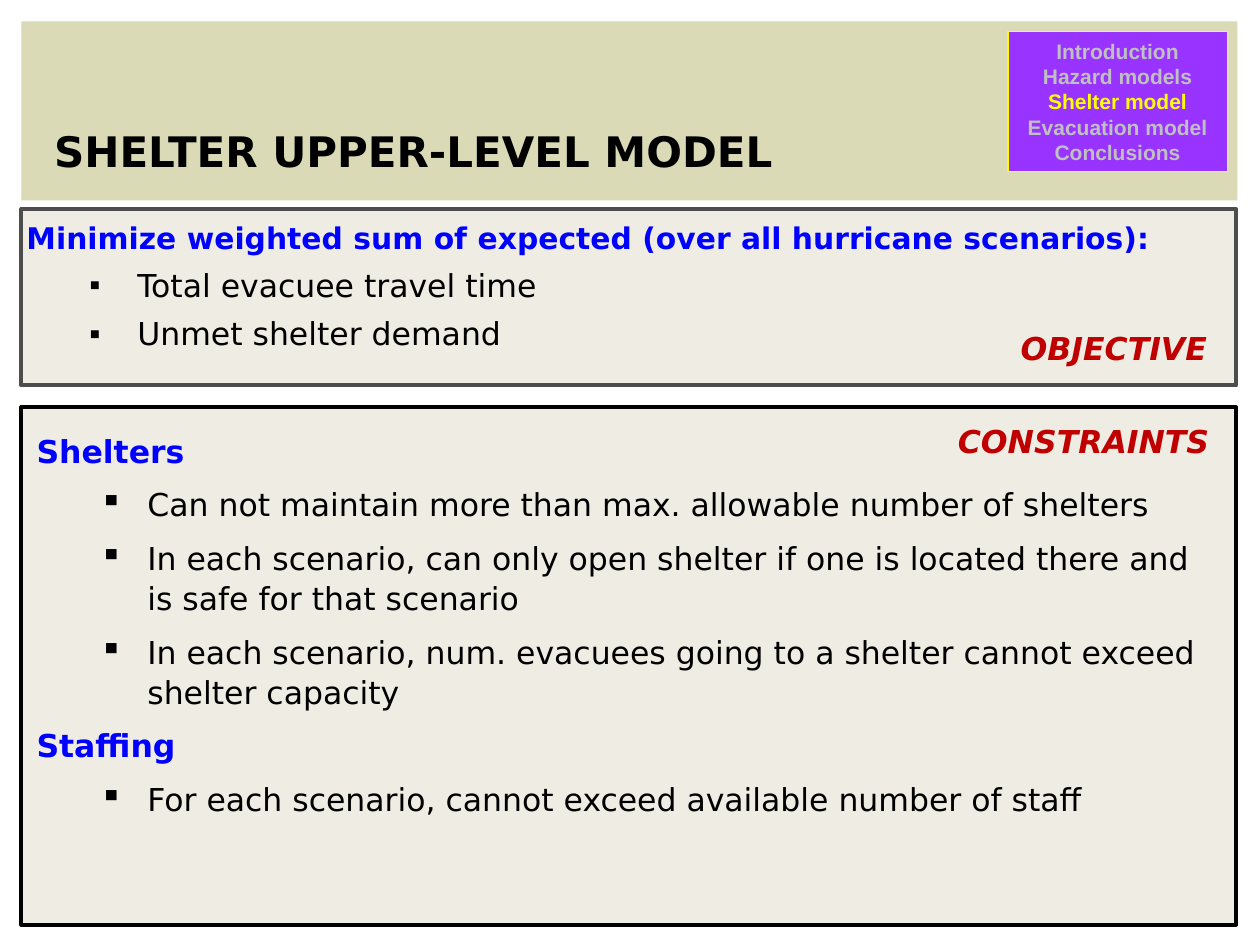
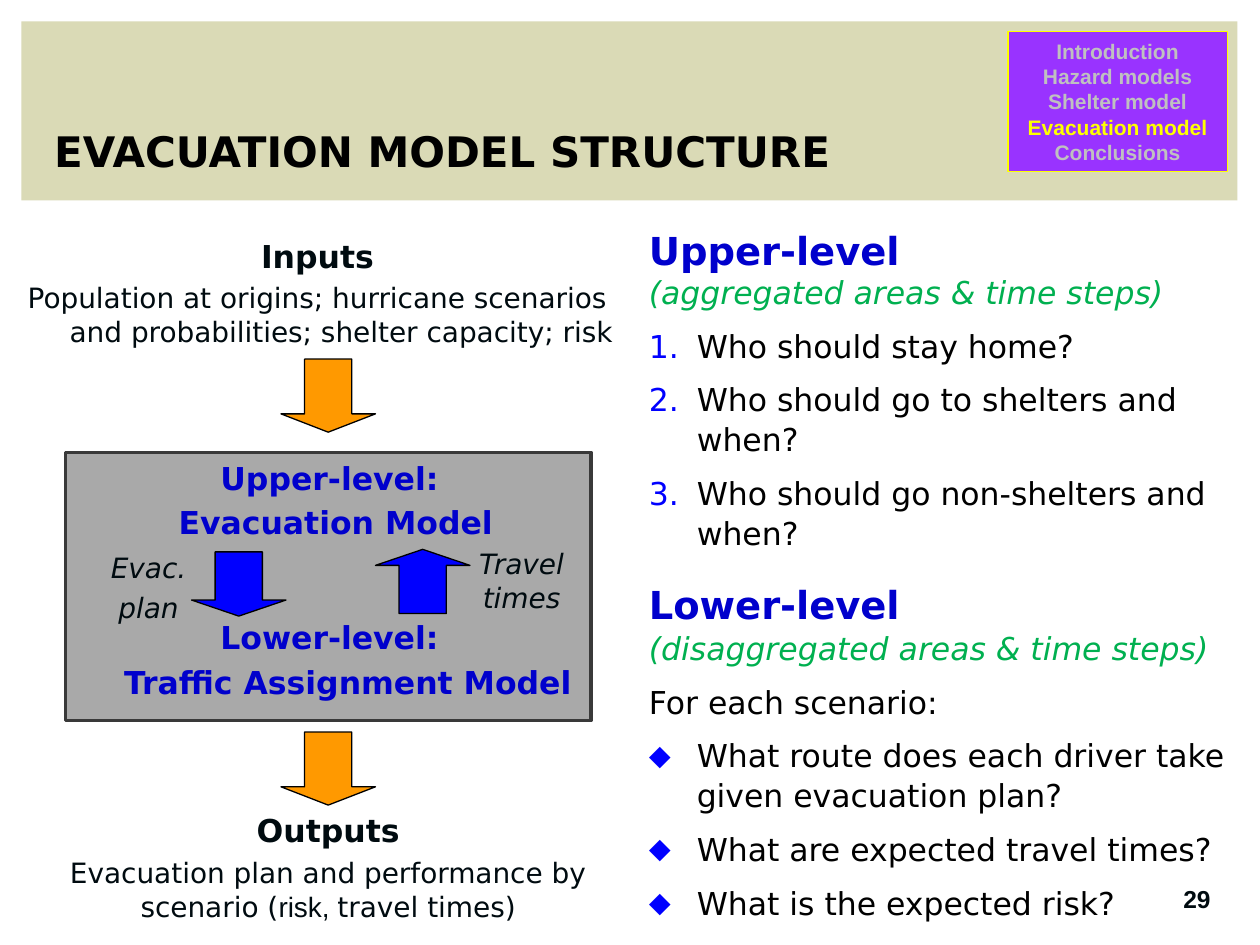
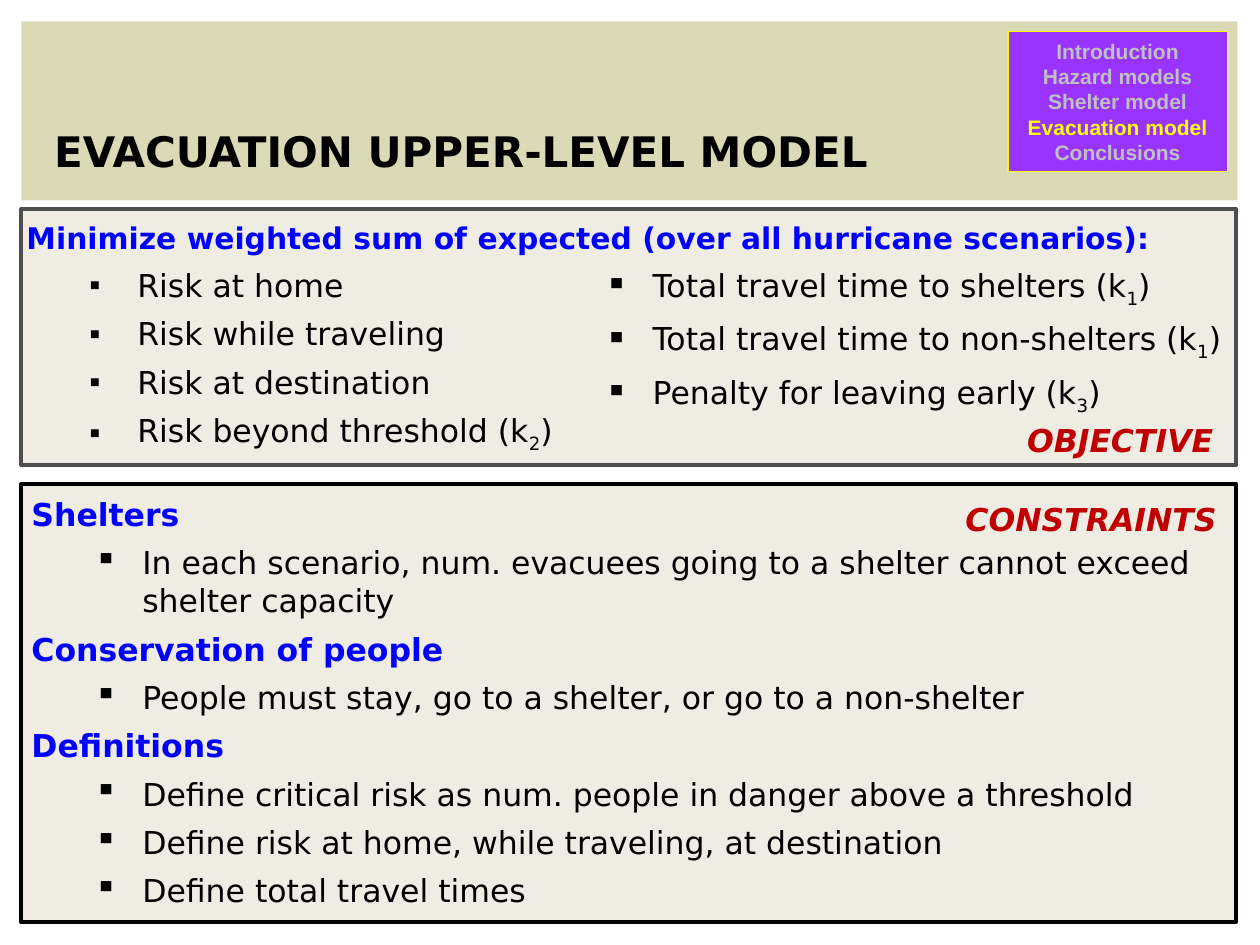
from dataclasses import dataclass, replace

from lxml.etree import SubElement
from pptx import Presentation
from pptx.dml.color import RGBColor
from pptx.enum.shapes import MSO_SHAPE as Preset
from pptx.enum.text import MSO_ANCHOR as Anchor, MSO_AUTO_SIZE as AutoSize, PP_ALIGN as Align
from pptx.oxml.ns import qn
from pptx.util import Inches, Pt

SANS, ARIAL = "DejaVu Sans", "Arial"
BLACK, INK, BLUE, NAVY = "000000", "000B10", "0000FF", "0000CC"
RED, GREEN, ORANGE, YELLOW = "C00000", "00B050", "FF9900", "FFFF00"
SILVER, PURPLE, BAND, CREAM, GRAY = "C0C0C0", "9933FF", "DADAB6", "EFEDE3", "4D4D4D"
SECTIONS = ["Introduction", "Hazard models", "Shelter model", "Evacuation model", "Conclusions"]


@dataclass(frozen=True)
class Style:
    """Look of one paragraph, with lengths in inches and sizes in points."""
    size: float = 18
    color: str = BLACK
    bold: bool = False
    italic: bool = False
    font: str = SANS
    align: Align = Align.LEFT
    before: float = 0
    spacing: float = 1.0
    left: float = 0
    hang: float = 0
    bullet: str = ""
    bullet_color: str = ""


TITLE = Style(24, bold=True, spacing=1.04)
GOAL = Style(17, BLUE, bold=True, spacing=1.05)
TOPIC = Style(color=BLUE, bold=True, before=6)
POINT = Style(before=6, left=0.88, hang=0.38, bullet="▪")
OPEN_TOPIC = replace(TOPIC, before=8.1, spacing=1.05)
OPEN_POINT = replace(POINT, before=8.1, spacing=1.05)
TAG = Style(color=RED, bold=True, italic=True, align=Align.CENTER)
LEVEL = Style(22, NAVY, bold=True, spacing=1.05)
SCOPE = Style(color=GREEN, italic=True, spacing=1.05)
PLAIN = Style(before=8.1, spacing=1.05)
QUESTION = replace(PLAIN, left=0.38, hang=0.38, bullet="⬥", bullet_color=BLUE)
NUMBERED = replace(QUESTION, bullet="1.")
CAPTION = Style(color=INK, bold=True, align=Align.CENTER)
DETAIL = Style(16, INK, align=Align.CENTER, before=3.6)
MODEL = Style(color=NAVY, bold=True, align=Align.CENTER, before=3.6)
FLOW = replace(DETAIL, italic=True)
SECTION = Style(12, SILVER, bold=True, font=ARIAL, align=Align.CENTER)
NUMBER = Style(14, INK, bold=True, font=ARIAL, align=Align.CENTER)


def rgb(code):
    """Turn a hex string into a colour."""
    return RGBColor.from_string(code)


def add_bullet(paragraph, style):
    """Set the indents and the bullet of a paragraph."""
    props = paragraph._p.get_or_add_pPr()
    props.set("marL", str(Inches(style.left)))
    props.set("indent", str(-Inches(style.hang)))
    if style.bullet_color:
        color = SubElement(props, qn("a:buClr"))
        SubElement(color, qn("a:srgbClr"), val=style.bullet_color)
    if style.bullet == "1.":
        SubElement(props, qn("a:buAutoNum"), type="arabicPeriod")
    elif style.bullet:
        SubElement(props, qn("a:buChar"), char=style.bullet)
    else:
        SubElement(props, qn("a:buNone"))


def write(frame, lines):
    """Write (style, text) lines; each | in a text starts a new run."""
    for index, (style, text) in enumerate(lines):
        paragraph = frame.paragraphs[0] if index == 0 else frame.add_paragraph()
        for part in text.split("|"):
            paragraph.add_run().text = part
        add_bullet(paragraph, style)
        paragraph.alignment = style.align
        paragraph.line_spacing = style.spacing
        paragraph.space_before = Pt(style.before if index else 0)
        font = paragraph.font
        font.name, font.size = style.font, Pt(style.size)
        font.bold, font.italic = style.bold, style.italic
        font.color.rgb = rgb(style.color)


def lower_marks(frame):
    """Lower every second run to a subscript."""
    for paragraph in frame.paragraphs:
        for span in paragraph.runs[1::2]:
            span.font._element.set("baseline", "-25000")


def set_insets(frame, size):
    """Give a text frame equal insets."""
    frame.margin_left = frame.margin_right = Inches(size)
    frame.margin_top = frame.margin_bottom = Inches(size)


def fill_placeholder(holder, at, lines, anchor=Anchor.TOP):
    """Move a placeholder and write its lines."""
    holder.left, holder.top, holder.width, holder.height = map(Inches, at)
    frame = holder.text_frame
    set_insets(frame, 0)
    frame.auto_size, frame.vertical_anchor = AutoSize.NONE, anchor
    write(frame, lines)
    return frame


def add_text(page, at, lines, inset=None, wrap=True):
    """Add a text box and return its frame."""
    frame = page.shapes.add_textbox(*map(Inches, at)).text_frame
    frame.word_wrap = wrap
    if inset is not None:
        set_insets(frame, inset)
    write(frame, lines)
    return frame


def add_block(page, at, fill, line=None, width=0.75, preset=Preset.RECTANGLE):
    """Add a filled preset shape."""
    block = page.shapes.add_shape(preset, *map(Inches, at))
    block.shadow.inherit = False
    block.fill.solid()
    block.fill.fore_color.rgb = rgb(fill)
    if line:
        block.line.color.rgb = rgb(line)
        block.line.width = Pt(width)
    else:
        block.line.fill.background()
    return block


def add_panel(page, top, height, line):
    """Add a cream panel behind the text of the page."""
    panel = add_block(page, (0.17, top, 9.64, height), CREAM, line, 2.25)
    page.shapes[0]._element.addprevious(panel._element)


def add_tag(page, left, top, width, text):
    """Add a red label to a panel."""
    frame = add_text(page, (left, top, width, 0.4), [(TAG, text)], wrap=False)
    frame.auto_size = AutoSize.SHAPE_TO_FIT_TEXT


def add_arrow(page, left, top, height, fill, preset=Preset.DOWN_ARROW):
    """Add a block arrow."""
    arrow = add_block(page, (left, top, 0.75, height), fill, BLACK, preset=preset)
    arrow.adjustments[0], arrow.adjustments[1] = 0.5, 0.25


def add_band(deck, page):
    """Place the title band on the slide master."""
    band = add_block(page, (0.17, 0.17, 9.65, 1.42), BAND)
    band._element.nvSpPr.cNvPr.set("id", "99")
    deck.slide_master.placeholders[0]._element.addprevious(band._element)


def add_page(deck, title, current):
    """Add a page with its title and the section list."""
    page = deck.slides.add_slide(deck.slide_layouts[1])
    fill_placeholder(page.shapes.title, (0.43, 0.29, 9.07, 1.11), [(TITLE, title)], Anchor.BOTTOM)
    sections = add_block(page, (8, 0.25, 1.74, 1.11), PURPLE, YELLOW)
    write(sections.text_frame, [
        (replace(SECTION, color=YELLOW) if name == current else SECTION, name) for name in SECTIONS])
    return page


def add_objective(page, points):
    """Fill the body with the goal and its terms."""
    goal = "Minimize weighted sum of expected (over all hurricane scenarios):"
    return fill_placeholder(page.placeholders[1], (0.21, 1.73, 9.79, 1.69),
                            [(GOAL, goal)] + [(POINT, text) for text in points])


def build_shelter(page):
    """Fill the shelter model page."""
    add_panel(page, 3.23, 4.11, BLACK)
    add_panel(page, 1.66, 1.4, GRAY)
    add_tag(page, 7.95, 2.56, 1.78, "OBJECTIVE")
    add_tag(page, 7.47, 3.3, 2.26, "CONSTRAINTS")
    add_objective(page, ["Total evacuee travel time", "Unmet shelter demand"])
    add_text(page, (0.29, 3.41, 9.34, 3.69), [
        (OPEN_TOPIC, "Shelters"),
        (OPEN_POINT, "Can not maintain more than max. allowable number of shelters"),
        (OPEN_POINT, "In each scenario, can only open shelter if one is located there and "
                     "is safe for that scenario"),
        (OPEN_POINT, "In each scenario, num. evacuees going to a shelter cannot exceed "
                     "shelter capacity"),
        (OPEN_TOPIC, "Staffing"),
        (OPEN_POINT, "For each scenario, cannot exceed available number of staff"),
    ], inset=0)


def build_structure(page):
    """Fill the evacuation model structure page."""
    number = add_text(page, (9.01, 6.88, 0.98, 0.5), [(NUMBER, "29")], inset=0.04, wrap=False)
    number.vertical_anchor = Anchor.MIDDLE
    add_text(page, (0, 1.83, 5.04, 1.02), [
        (CAPTION, "Inputs"),
        (replace(DETAIL, left=0.38, hang=0.38),
         "Population at origins; hurricane scenarios and probabilities; shelter capacity; risk"),
    ])
    core = add_block(page, (0.52, 3.59, 4.17, 2.13), GRAY, "393939", 2)
    tint = core.fill._xPr.find(qn("a:solidFill"))[0]
    SubElement(tint, qn("a:alpha"), val="48000")
    for top in (2.85, 5.81):
        add_arrow(page, 2.23, top, 0.58, ORANGE)
    for top, level, name, left in ((3.59, "Upper-level:", "Evacuation Model", 0.1),
                                   (4.86, "Lower-level:", "Traffic Assignment Model", 0.29)):
        add_text(page, (0.24, top, 4.75, 0.86), [(MODEL, level), (replace(MODEL, left=left), name)])
    outputs = add_text(page, (0.23, 6.39, 4.75, 0.91), [
        (CAPTION, "Outputs"),
        (DETAIL, "Evacuation plan and performance by scenario (|risk, |travel times)"),
    ])
    outputs.paragraphs[1].runs[1].font.name = ARIAL
    add_arrow(page, 1.52, 4.38, 0.51, BLUE)
    add_arrow(page, 2.98, 4.36, 0.51, BLUE, Preset.UP_ARROW)
    add_text(page, (0.65, 4.32, 1.06, 0.74), [(FLOW, "Evac."), (FLOW, "plan")])
    add_text(page, (3.61, 4.29, 1.06, 0.74), [(FLOW, "Travel times")])
    add_text(page, (5.15, 1.78, 4.78, 2.59), [
        (LEVEL, "Upper-level"),
        (replace(SCOPE, spacing=1.0), "(aggregated areas & time steps)"),
        (NUMBERED, "Who should stay home?"),
        (NUMBERED, "Who should go to shelters and when?"),
        (NUMBERED, "Who should go non-shelters and when?"),
    ], inset=0)
    fill_placeholder(page.placeholders[1], (5.15, 4.59, 4.78, 1.67), [
        (LEVEL, "Lower-level"),
        (SCOPE, "(disaggregated areas & time steps)"),
        (PLAIN, "For each scenario:"),
        (QUESTION, "What route does each driver take given evacuation plan?"),
        (QUESTION, "What are expected travel times?"),
        (QUESTION, "What is the expected risk?"),
    ])


def build_evacuation(page):
    """Fill the evacuation upper-level model page."""
    add_panel(page, 3.84, 3.48, BLACK)
    add_panel(page, 1.66, 2.03, GRAY)
    add_tag(page, 8, 3.29, 1.78, "OBJECTIVE")
    add_tag(page, 7.53, 3.92, 2.26, "CONSTRAINTS")
    risks = add_objective(page, ["Risk at home", "Risk while traveling", "Risk at destination",
                                 "Risk beyond threshold (k|2|)"])
    times = add_text(page, (4.3, 2.11, 5.41, 1.23), [
        (POINT, "Total travel time to shelters (k|1|)"),
        (POINT, "Total travel time to non-shelters (k|1|)"),
        (POINT, "Penalty for leaving early (k|3|)"),
    ], inset=0)
    lower_marks(risks)
    lower_marks(times)
    add_text(page, (0.25, 3.93, 9.56, 3.01), [
        (TOPIC, "Shelters"),
        (POINT, "In each scenario, num. evacuees going to a shelter cannot exceed shelter capacity"),
        (TOPIC, "Conservation of people"),
        (POINT, "People must stay, go to a shelter, or go to a non-shelter"),
        (TOPIC, "Definitions"),
        (POINT, "Define critical risk as num. people in danger above a threshold"),
        (POINT, "Define risk at home, while traveling, at destination"),
        (POINT, "Define total travel times"),
    ], inset=0)


def main():
    """Build and save the deck."""
    deck = Presentation()
    deck.slide_width, deck.slide_height = Inches(10), Inches(7.5)
    shelter = add_page(deck, "SHELTER UPPER-LEVEL MODEL", "Shelter model")
    add_band(deck, shelter)
    build_shelter(shelter)
    build_structure(add_page(deck, "EVACUATION MODEL STRUCTURE", "Evacuation model"))
    build_evacuation(add_page(deck, "EVACUATION UPPER-LEVEL MODEL", "Evacuation model"))
    deck.save("out.pptx")


if __name__ == "__main__":
    main()
